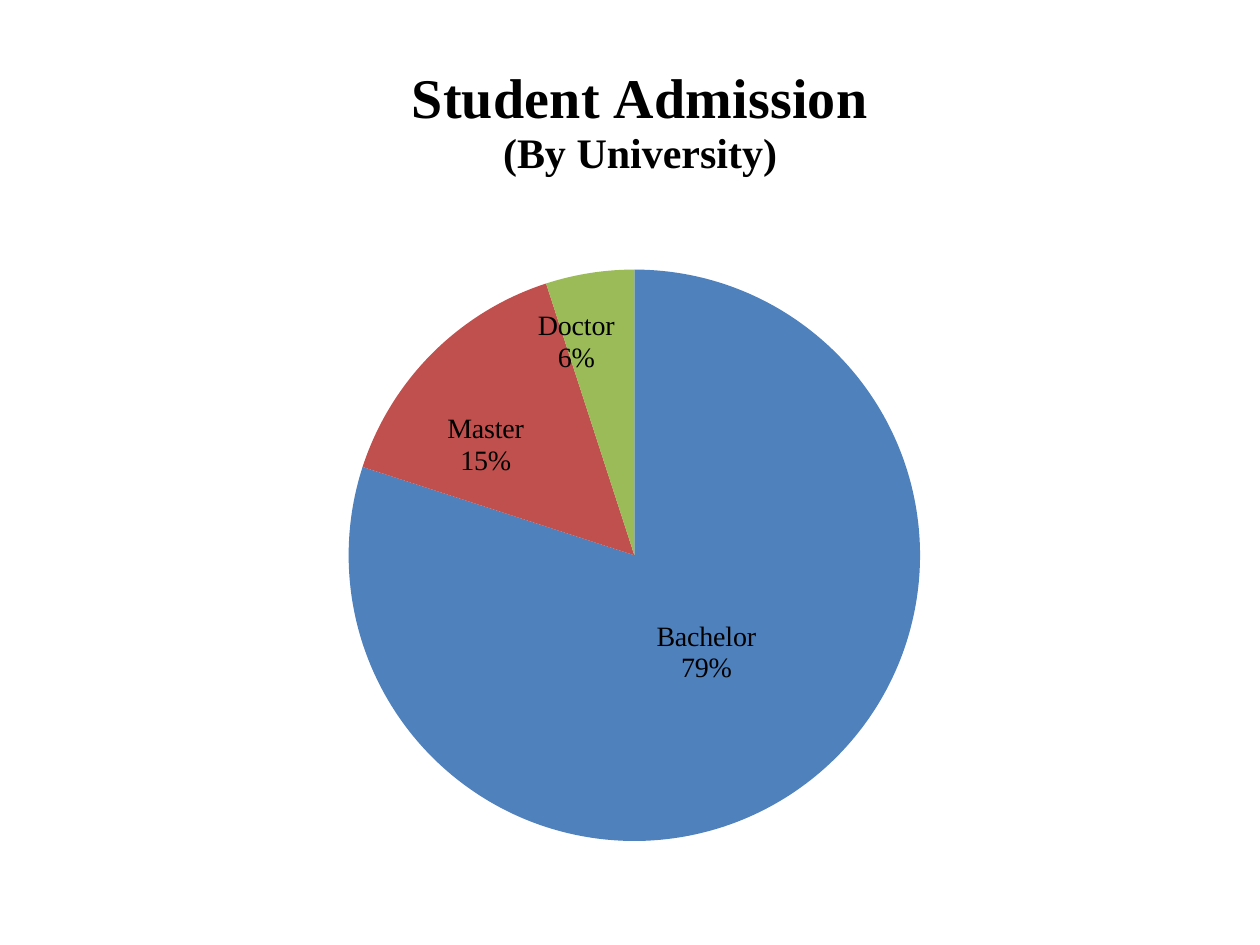
from pptx import Presentation
from pptx.chart.data import CategoryChartData
from pptx.dml.color import RGBColor
from pptx.enum import chart as kinds
from pptx.oxml import parse_xml
from pptx.oxml.ns import nsdecls
from pptx.util import Pt

HUES = {"text": "000000", "Bachelor": "4F81BD", "Master": "C0504D", "Doctor": "9BBB59"}
FACE = "Times New Roman"
DEGREES = [
    ("Bachelor", 80, "79%", (-0.01, -0.02)),
    ("Master", 15, "15%", (-0.04, -0.01)),
    ("Doctor", 5, "6%", (-0.03, -0.08)),
]


def tint(key):
    return RGBColor.from_string(HUES[key])


def style(font, size, bold=False, face=FACE):
    font.name = face
    font.size = Pt(size)
    font.bold = bold
    font.color.rgb = tint("text")


def place(**spots):
    parts = "".join(f'<c:{name} val="{val}"/>' for name, val in spots.items())
    return parse_xml(
        f'<c:layout {nsdecls("c")}><c:manualLayout>{parts}</c:manualLayout></c:layout>'
    )


def write(frame, lines, sizes, bold=False):
    frame.text = "\n".join(lines)
    for para, size in zip(frame.paragraphs, sizes):
        style(para.font, size, bold)
        for run in para.runs:
            style(run.font, size, bold)


def add_pie(slide):
    data = CategoryChartData()
    data.categories = [row[0] for row in DEGREES]
    data.add_series("Students", [row[1] for row in DEGREES])
    frame = slide.shapes.add_chart(
        kinds.XL_CHART_TYPE.PIE, Pt(22.32), Pt(0), Pt(680.4), Pt(511.92), data
    )
    chart = frame.chart
    style(chart.font, 10, face="Calibri")
    chart.has_legend = False
    area = chart.plots[0]._element.getparent()
    for old in area.findall("{*}layout"):
        area.remove(old)
    area.insert(0, place(layoutTarget="inner", xMode="edge", yMode="edge",
                         x=0.26, y=0.3, w=0.48, h=0.64))
    return chart


def add_title(chart):
    chart.has_title = True
    title = chart.chart_title
    write(title.text_frame, ["Student Admission", "(By University)"], [32, 24], True)
    title.include_in_layout = False
    item = title._element
    for old in item.findall("{*}layout"):
        item.remove(old)
    item.find("{*}tx").addnext(place(xMode="edge", yMode="edge", x=0.31, y=0.07))


def add_labels(plot):
    plot.vary_by_categories = True
    plot.has_data_labels = True
    labels = plot.data_labels
    style(labels.font, 16)
    labels.show_category_name = True
    labels.show_percentage = True
    labels.show_value = False
    for i, (name, _, share, (x, y)) in enumerate(DEGREES):
        point = plot.series[0].points[i]
        point.format.fill.solid()
        point.format.fill.fore_color.rgb = tint(name)
        label = point.data_label
        write(label.text_frame, [name, share], [16, 16])
        label.position = kinds.XL_LABEL_POSITION.CENTER
        item = label._dLbl
        for old in item.findall("{*}layout"):
            item.remove(old)
        item.find("{*}idx").addnext(place(x=x, y=y))


def main():
    deck = Presentation()
    deck.slide_width, deck.slide_height = Pt(720), Pt(540)
    slide = deck.slides.add_slide(deck.slide_layouts[6])
    chart = add_pie(slide)
    add_title(chart)
    add_labels(chart.plots[0])
    deck.save("out.pptx")


if __name__ == "__main__":
    main()
